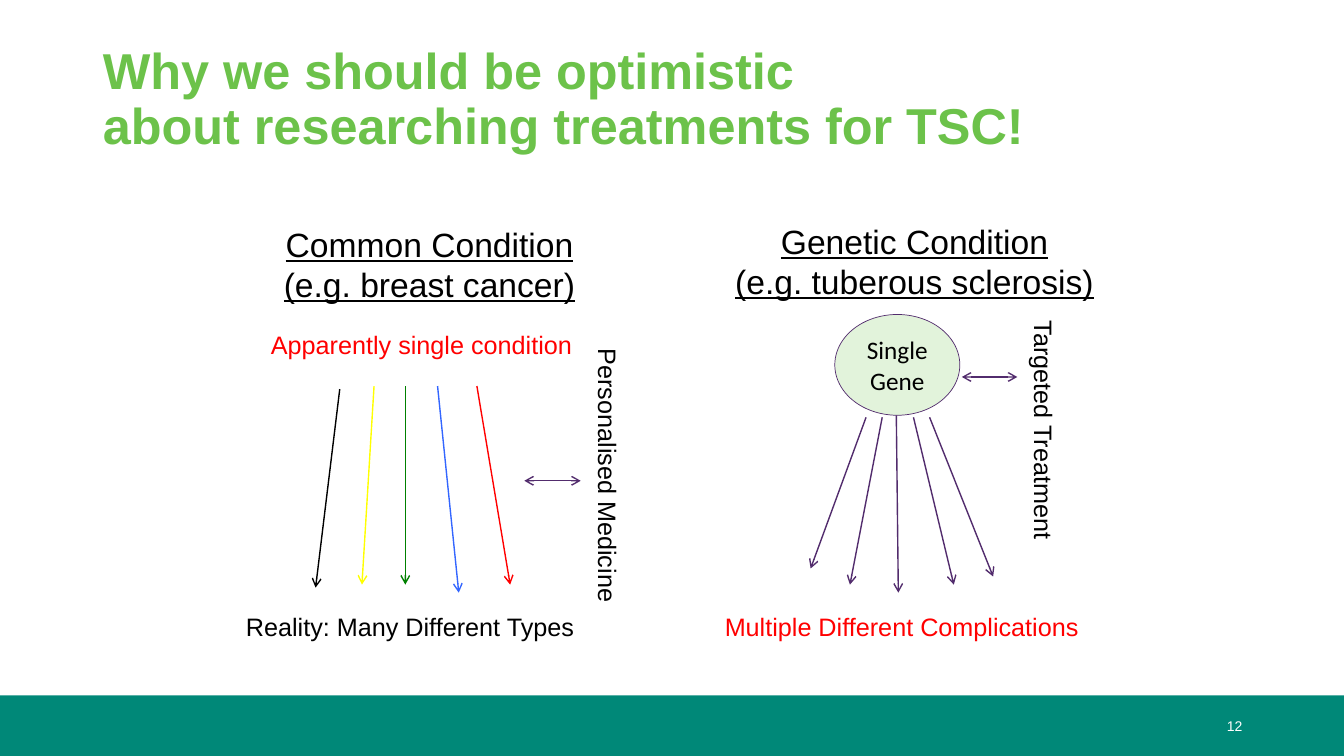
from dataclasses import dataclass

from lxml.etree import SubElement
from pptx import Presentation
from pptx.dml.color import RGBColor
from pptx.enum.shapes import MSO_CONNECTOR, MSO_SHAPE
from pptx.enum.text import MSO_ANCHOR, MSO_AUTO_SIZE, PP_ALIGN
from pptx.oxml.ns import qn
from pptx.shapes.autoshape import Shape
from pptx.slide import Slide
from pptx.text.text import TextFrame
from pptx.util import Emu, Pt

SCALE = 9144  # EMU in one px, 100 px to the inch
Box = tuple[int, int, int, int]
Point = tuple[int, int]


@dataclass(frozen=True)
class Theme:
    white: str = "FFFFFF"
    black: str = "000000"
    red: str = "FF0000"
    blue: str = "3366FF"
    green: str = "008000"
    yellow: str = "FFFF00"
    purple: str = "522C6D"
    lime: str = "6CC24A"
    mint: str = "E2F3DB"
    teal: str = "008878"
    font: str = "Arial"
    round_font: str = "Calibri"
    title: int = 36
    head: int = 24
    body: int = 18
    small: int = 10


THEME = Theme()


@dataclass(frozen=True)
class Style:
    size: int = THEME.body
    color: str = THEME.black
    font: str = THEME.font
    bold: bool = False
    under: bool = False
    align: PP_ALIGN = PP_ALIGN.LEFT


@dataclass(frozen=True)
class Label:
    box: Box
    lines: tuple[str, ...]
    style: Style = Style()
    wrap: bool = False
    turn: int = 0
    anchor: MSO_ANCHOR = MSO_ANCHOR.TOP


@dataclass(frozen=True)
class Arrow:
    start: Point
    end: Point
    color: str = THEME.purple
    double: bool = False


def px(*values: int) -> list[Emu]:
    return [Emu(value * SCALE) for value in values]


def rgb(color: str) -> RGBColor:
    return RGBColor.from_string(color)


def write(frame: TextFrame, lines: tuple[str, ...], style: Style) -> None:
    """Each entry is a paragraph; a newline inside it is a line break."""
    for index, line in enumerate(lines):
        para = frame.add_paragraph() if index else frame.paragraphs[0]
        para.alignment = style.align
        for part, text in enumerate(line.split("\n")):
            if part:
                para.add_line_break()
            run = para.add_run()
            run.text = text
            font = run.font
            font.name, font.size = style.font, Pt(style.size)
            font.bold, font.underline = style.bold, style.under
            font.color.rgb = rgb(style.color)


def draw_label(slide: Slide, label: Label) -> None:
    shape = slide.shapes.add_textbox(*px(*label.box))
    shape.rotation = label.turn
    frame = shape.text_frame
    frame.word_wrap = label.wrap
    frame.vertical_anchor = label.anchor
    write(frame, label.lines, label.style)


def draw_shape(slide: Slide, kind: MSO_SHAPE, box: Box, fill: str) -> Shape:
    shape = slide.shapes.add_shape(kind, *px(*box))
    shape.shadow.inherit = False
    shape.fill.solid()
    shape.fill.fore_color.rgb = rgb(fill)
    shape.line.fill.background()
    return shape


def draw_arrow(slide: Slide, arrow: Arrow) -> None:
    line = slide.shapes.add_connector(
        MSO_CONNECTOR.STRAIGHT, *px(*arrow.start, *arrow.end))
    line.line.width = Pt(1)
    line.line.color.rgb = rgb(arrow.color)
    props = line.line._get_or_add_ln()
    for end in ("headEnd", "tailEnd") if arrow.double else ("tailEnd",):
        SubElement(props, qn(f"a:{end}"), type="arrow")
    SubElement(line._element.spPr, qn("a:effectLst"))


HEAD = Style(size=THEME.head, under=True, align=PP_ALIGN.CENTER)

LABELS = (
    # Common condition
    Label((261, 217, 330, 91), ("Common Condition (e.g. breast cancer)",), HEAD, wrap=True),
    Label((257, 322, 322, 40), ("Apparently single condition",),
          Style(color=THEME.red, align=PP_ALIGN.CENTER)),
    Label((234, 602, 349, 40), ("Reality: Many Different Types",)),
    Label((466, 453, 274, 40), ("Personalised Medicine",), turn=90),
    # Genetic condition
    Label((711, 214, 392, 91), ("Genetic Condition", "(e.g. tuberous sclerosis)"),
          HEAD, wrap=True),
    Label((709, 602, 376, 40), ("Multiple Different Complications",),
          Style(color=THEME.red)),
    Label((916, 408, 239, 40), ("Targeted Treatment",), turn=90),
    # Slide number
    Label((942, 690, 300, 60), ("12",),
          Style(THEME.small, THEME.white, align=PP_ALIGN.RIGHT),
          wrap=True, anchor=MSO_ANCHOR.MIDDLE),
)

ARROWS = (
    # One colour for each type of the common condition
    Arrow((337, 386), (313, 583), THEME.black),
    Arrow((371, 383), (359, 580), THEME.yellow),
    Arrow((402, 383), (402, 580), THEME.green),
    Arrow((434, 383), (455, 588), THEME.blue),
    Arrow((473, 383), (506, 580), THEME.red),
    # From the single gene to its complications
    Arrow((859, 414), (804, 564)),
    Arrow((875, 414), (843, 580)),
    Arrow((889, 412), (891, 588)),
    Arrow((906, 414), (946, 580)),
    Arrow((922, 414), (985, 572)),
    # Links to the treatments
    Arrow((520, 477), (576, 477), double=True),
    Arrow((954, 374), (1009, 374), double=True),
)


def main() -> None:
    deck = Presentation()
    deck.slide_width, deck.slide_height = px(1333, 750)
    slide = deck.slides.add_slide(deck.slide_layouts[5])

    # Footer band
    draw_shape(slide, MSO_SHAPE.RECTANGLE, (0, 690, 1333, 60), THEME.teal)

    # Title
    title = slide.shapes.title
    title.left, title.top, title.width, title.height = px(92, 44, 984, 115)
    frame = title.text_frame
    frame.auto_size = MSO_AUTO_SIZE.NONE
    frame.vertical_anchor = MSO_ANCHOR.BOTTOM
    write(frame, ("Why we should be optimistic\nabout researching treatments for TSC!",),
          Style(THEME.title, THEME.lime, bold=True))
    frame.paragraphs[0].line_spacing = 0.9

    # Single gene
    gene = draw_shape(slide, MSO_SHAPE.OVAL, (828, 312, 124, 100), THEME.mint)
    gene.line.color.rgb = rgb(THEME.purple)
    gene.line.width = Pt(0.5)
    gene.text_frame.vertical_anchor = MSO_ANCHOR.MIDDLE
    write(gene.text_frame, ("Single\nGene",),
          Style(font=THEME.round_font, align=PP_ALIGN.CENTER))

    # Labels and arrows
    for label in LABELS:
        draw_label(slide, label)
    for arrow in ARROWS:
        draw_arrow(slide, arrow)

    deck.save("out.pptx")


if __name__ == "__main__":
    main()
